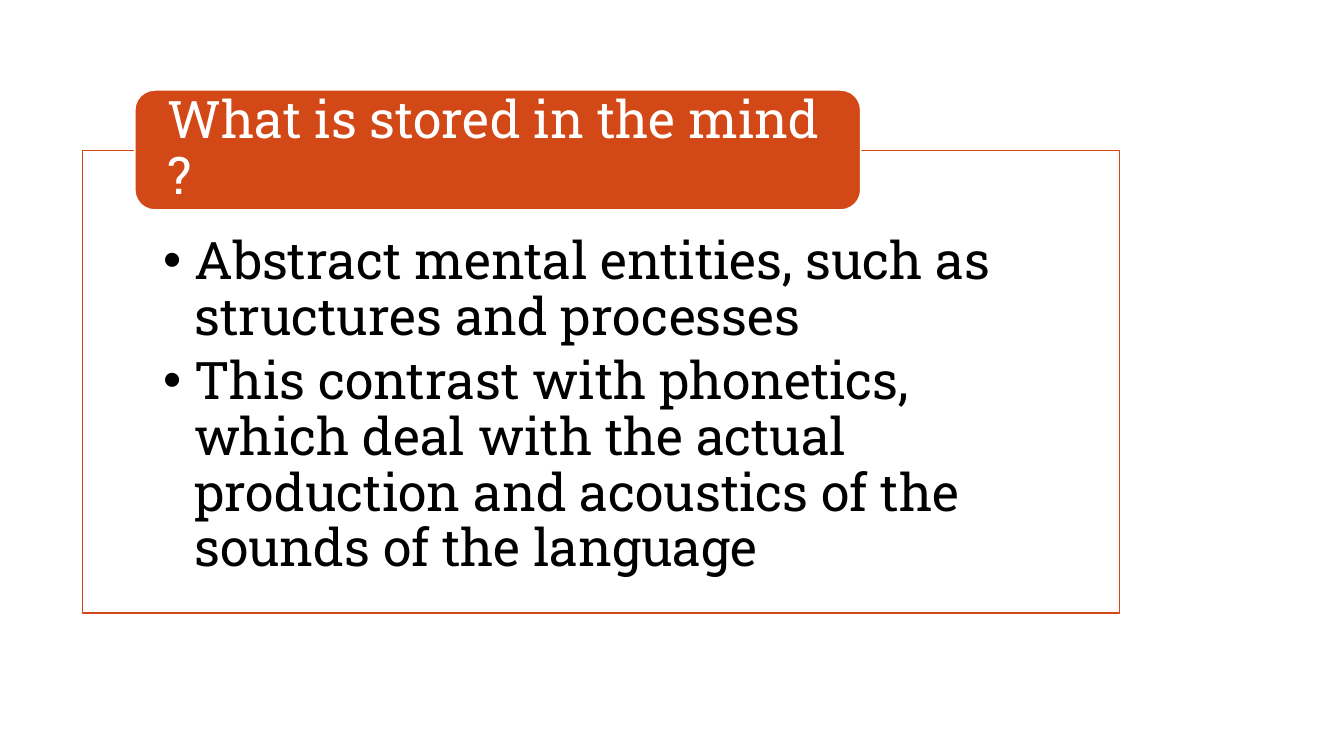
from lxml import etree
from pptx import Presentation
from pptx import util as u
from pptx.dml import color
from pptx.enum import shapes, text
from pptx.oxml import ns


def tint(code):
    return color.RGBColor.from_string(code)


def assign(item, values):
    for name, value in values.items():
        setattr(item, name, value)


class Page:
    """Holds the text style and the current slide."""

    face = "Roboto Slab"
    size = u.Pt(37)
    rust, white, black = "D34817", "FFFFFF", "000000"

    def __init__(self, deck):
        self.slide = deck.slides.add_slide(deck.slide_layouts[1])

    def place(self, shape, left, top, width, height):
        box = dict(left=left, top=top, width=width, height=height)
        assign(shape, {side: u.Cm(size) for side, size in box.items()})

    def paint(self, shape, fill, line):
        shape.fill.solid()
        shape.fill.fore_color.rgb = tint(fill)
        shape.line.color.rgb = tint(line)
        shape.line.width = u.Pt(1)

    def frame(self, shape, side, top, bottom, anchor):
        assign(shape.text_frame, dict(
            margin_left=u.Cm(side), margin_right=u.Cm(side),
            margin_top=u.Cm(top), margin_bottom=u.Cm(bottom),
            vertical_anchor=anchor, word_wrap=True,
            auto_size=text.MSO_AUTO_SIZE.NONE))

    def style(self, para, ink, after=0):
        assign(para, dict(alignment=text.PP_ALIGN.LEFT, line_spacing=0.9,
                          space_before=u.Pt(0), space_after=u.Pt(after)))
        assign(para.font, dict(name=self.face, size=self.size))
        para.font.color.rgb = tint(ink)

    def bullet(self, para, indent):
        props = para._p.get_or_add_pPr()
        props.set("marL", str(u.Cm(indent)))
        props.set("indent", str(-u.Cm(indent)))
        etree.SubElement(props, ns.qn("a:buChar")).set("char", "•")

    def panel(self, items, box):
        """Fill the body placeholder as an outlined list."""
        body = self.slide.placeholders[1]
        self.place(body, *box)
        self.paint(body, self.white, self.rust)
        self.frame(body, 2.03, 2.13, 0.74, text.MSO_ANCHOR.TOP)
        body.text_frame.text = "\n".join(items)
        for para in body.text_frame.paragraphs:
            self.bullet(para, 0.79)
            self.style(para, self.black, 5.5)

    def badge(self, box):
        shape = self.slide.shapes.add_shape(
            shapes.MSO_SHAPE.ROUNDED_RECTANGLE, *map(u.Cm, box))
        shape.shadow.inherit = False
        self.paint(shape, self.rust, self.white)

    def title(self, words, box):
        """Set the title and bring it in front of the badge."""
        head = self.slide.shapes.title
        self.place(head, *box)
        self.frame(head, 0.69, 0, 0, text.MSO_ANCHOR.MIDDLE)
        head.text_frame.text = words
        self.style(head.text_frame.paragraphs[0], self.white)
        self.slide.shapes.element.append(head.element)


def main():
    deck = Presentation()
    assign(deck, dict(slide_width=u.Cm(33.87), slide_height=u.Cm(19.05)))
    page = Page(deck)
    page.panel([
        "Abstract mental entities, such as structures and processes",
        "This contrast with phonetics, which deal with the actual "
        "production and acoustics of the sounds of the language",
    ], (2.08, 3.79, 26.14, 11.66))
    page.badge((3.4, 2.27, 18.29, 3.02))
    page.title("What is stored in the mind ?", (3.54, 2.41, 18, 2.74))
    deck.save("out.pptx")


if __name__ == "__main__":
    main()
